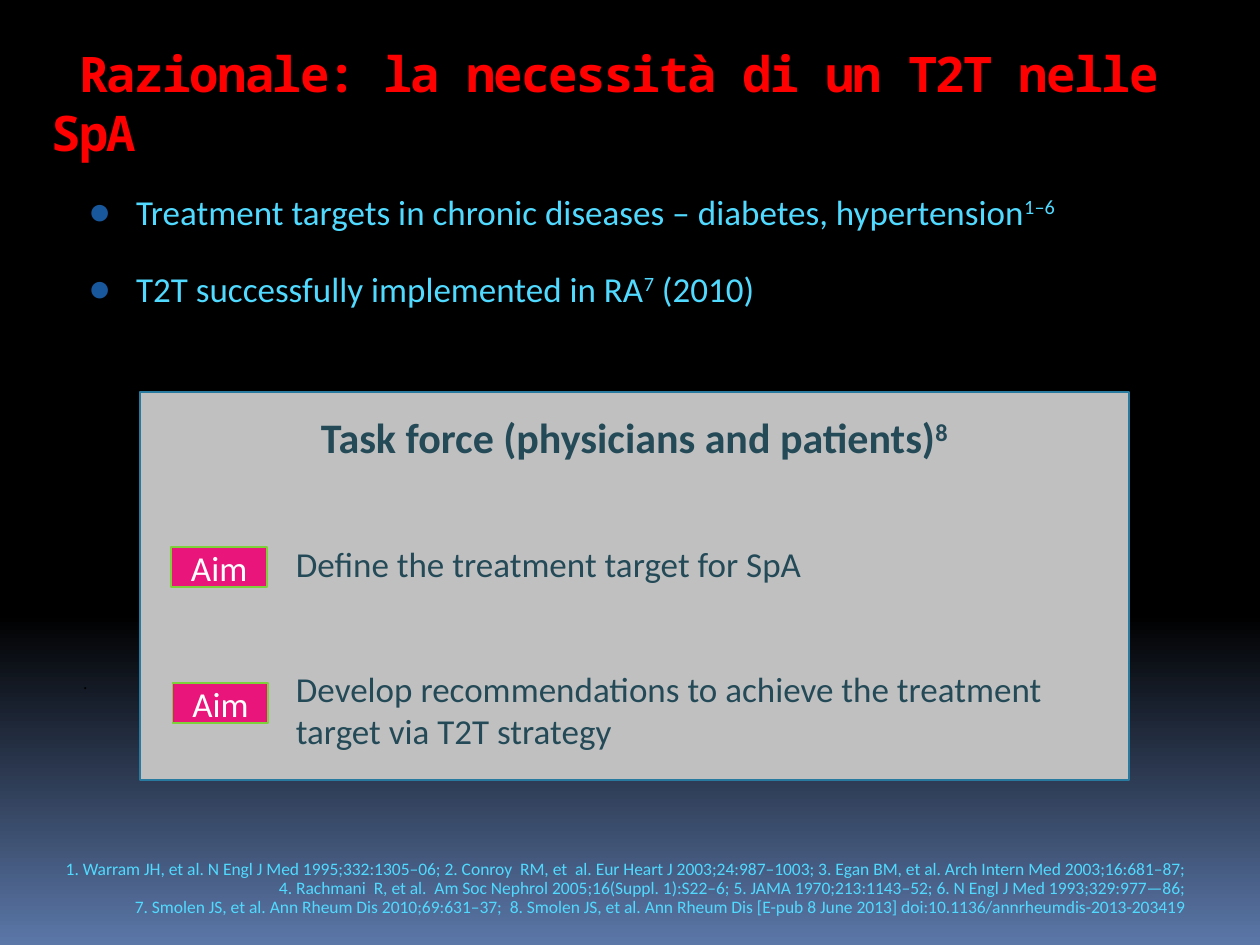
"""Build the slide on the rationale for treat-to-target in SpA."""
from lxml import etree
from pptx import Presentation
from pptx.dml.color import RGBColor
from pptx.enum.shapes import MSO_SHAPE
from pptx.enum.text import MSO_ANCHOR, PP_ALIGN
from pptx.oxml.ns import qn
from pptx.util import Inches, Pt

RECT = MSO_SHAPE.RECTANGLE
TOP, MIDDLE, BOTTOM = MSO_ANCHOR.TOP, MSO_ANCHOR.MIDDLE, MSO_ANCHOR.BOTTOM
LEFT, CENTER, RIGHT = PP_ALIGN.LEFT, PP_ALIGN.CENTER, PP_ALIGN.RIGHT

THEME = {
    "font": "Calibri", "title_font": "Noto Sans Mono",
    "title": "FF0000", "text": "51DAFF", "bullet": "18579B",
    "card": "C0C0C0", "card_line": "287A9E", "card_text": "244A58",
    "aim": "EA157A", "aim_line": "7FD13B", "white": "FFFFFF",
    "black": "000000", "glow": "5B77A8",
    "title_size": 28, "head_size": 24, "body_size": 20, "small_size": 10,
}

TITLE = " Razionale: la necessità di un T2T nelle SpA"
BULLETS = [
    [("Treatment targets in chronic diseases ‒ diabetes, hypertension", False), ("1–6", True)],
    [("T2T successfully implemented in RA", False), ("7", True), (" (2010)", False)],
]
CARD_TITLE = [("Task force (physicians and patients)", False), ("8", True)]
AIMS = [
    ("Define the treatment target for SpA", (1.36, 4.34), (2.25, 4.26, 5.45, 0.44)),
    ("Develop recommendations to achieve the treatment\vtarget via T2T strategy",
     (1.37, 5.42), (2.25, 5.25, 6.62, 0.77)),
]
AIM_SIZE = (0.76, 0.32)
REFERENCES = "\v".join([
    "1. Warram JH, et al. N Engl J Med 1995;332:1305–06; 2. Conroy  RM, et  al. Eur Heart J 2003;24:987–1003; "
    "3. Egan BM, et al. Arch Intern Med 2003;16:681–87;",
    "4. Rachmani  R, et al.  Am Soc Nephrol 2005;16(Suppl. 1):S22–6; 5. JAMA 1970;213:1143–52; "
    "6. N Engl J Med 1993;329:977—86;",
    "7. Smolen JS, et al. Ann Rheum Dis 2010;69:631–37;  8. Smolen JS, et al. Ann Rheum Dis "
    "[E-pub 8 June 2013] doi:10.1136/annrheumdis-2013-203419",
])


def color(name):
    return RGBColor.from_string(THEME[name])


def place(sp, box):
    sp.left, sp.top, sp.width, sp.height = map(Inches, box)


def style(p, size, ink, align=LEFT, bold=False, font="font"):
    p.alignment = align
    for r in p.runs:
        r.font.name, r.font.size = THEME[font], Pt(THEME[size])
        r.font.bold, r.font.color.rgb = bold, color(ink)


def add_runs(p, parts):
    for text, raised in parts:
        r = p.add_run()
        r.text = text
        if raised:
            r.font._element.set("baseline", "30000")


def add_bullet(p):
    pPr = p._p.get_or_add_pPr()
    pPr.set("marL", str(Inches(0.38)))
    pPr.set("indent", str(-Inches(0.38)))
    clr = etree.SubElement(pPr, qn("a:buClr"))
    etree.SubElement(clr, qn("a:srgbClr"), val=THEME["bullet"])
    etree.SubElement(pPr, qn("a:buSzPct"), val="110000")
    etree.SubElement(pPr, qn("a:buChar"), char="●")


def add_rect(s, box, fill, line, width):
    sp = s.shapes.add_shape(RECT, *map(Inches, box))
    sp.shadow.inherit = False
    sp.fill.solid()
    sp.fill.fore_color.rgb = color(fill)
    sp.line.color.rgb = color(line)
    sp.line.width = Pt(width)
    return sp


def add_text(s, box, text, size, ink, align=LEFT):
    tf = s.shapes.add_textbox(*map(Inches, box)).text_frame
    tf.word_wrap = True
    tf.text = text
    style(tf.paragraphs[0], size, ink, align)
    return tf


def add_background(s):
    fill = s.background.fill
    fill.gradient()
    fill.gradient_angle = 270
    for stop, position, name in zip(fill.gradient_stops, (0.65, 1), ("black", "glow")):
        stop.position = position
        stop.color.rgb = color(name)


def add_title(s):
    sp = s.shapes.title
    place(sp, (0.31, 0.31, 9.3, 1))
    sp.text_frame.text = TITLE
    sp.text_frame.vertical_anchor = MIDDLE
    p = sp.text_frame.paragraphs[0]
    style(p, "title_size", "title", bold=True, font="title_font")
    p.runs[0].font._element.set("spc", "-100")


def add_bullets(s):
    sp = s.placeholders[1]
    place(sp, (0.6, 1.46, 9.13, 1.45))
    tf = sp.text_frame
    for i, parts in enumerate(BULLETS):
        p = tf.add_paragraph() if i else tf.paragraphs[0]
        p.space_before = Pt(20 if i else 0)
        add_bullet(p)
        add_runs(p, parts)
        style(p, "body_size", "text")


def add_card(s):
    tf = add_rect(s, (1.11, 3.11, 7.85, 3.08), "card", "card_line", 1).text_frame
    tf.vertical_anchor = TOP
    tf.margin_top = Inches(0.16)
    add_runs(tf.paragraphs[0], CARD_TITLE)
    style(tf.paragraphs[0], "head_size", "card_text", CENTER, bold=True)
    for text, corner, box in AIMS:
        tf = add_rect(s, corner + AIM_SIZE, "aim", "aim_line", 0.94).text_frame
        tf.vertical_anchor = MIDDLE
        tf.text = "Aim"
        style(tf.paragraphs[0], "body_size", "white", CENTER)
        add_text(s, box, text, "body_size", "card_text")


def add_small_print(s):
    tf = add_text(s, (0.66, 5.33, 0.04, 0.17), ".", "small_size", "black")
    tf.word_wrap = False
    tf.margin_left = tf.margin_right = tf.margin_top = tf.margin_bottom = 0
    tf = add_text(s, (0.24, 6.77, 9.29, 0.56), REFERENCES, "small_size", "text", RIGHT)
    tf.vertical_anchor = BOTTOM
    tf.margin_right = Inches(0.13)
    tf.paragraphs[0].line_spacing = 0.9


def main():
    prs = Presentation()
    prs.slide_width, prs.slide_height = Inches(10), Inches(7.5)
    s = prs.slides.add_slide(prs.slide_layouts[1])
    add_background(s)
    add_title(s)
    add_bullets(s)
    add_card(s)
    add_small_print(s)
    prs.save("out.pptx")


if __name__ == "__main__":
    main()
